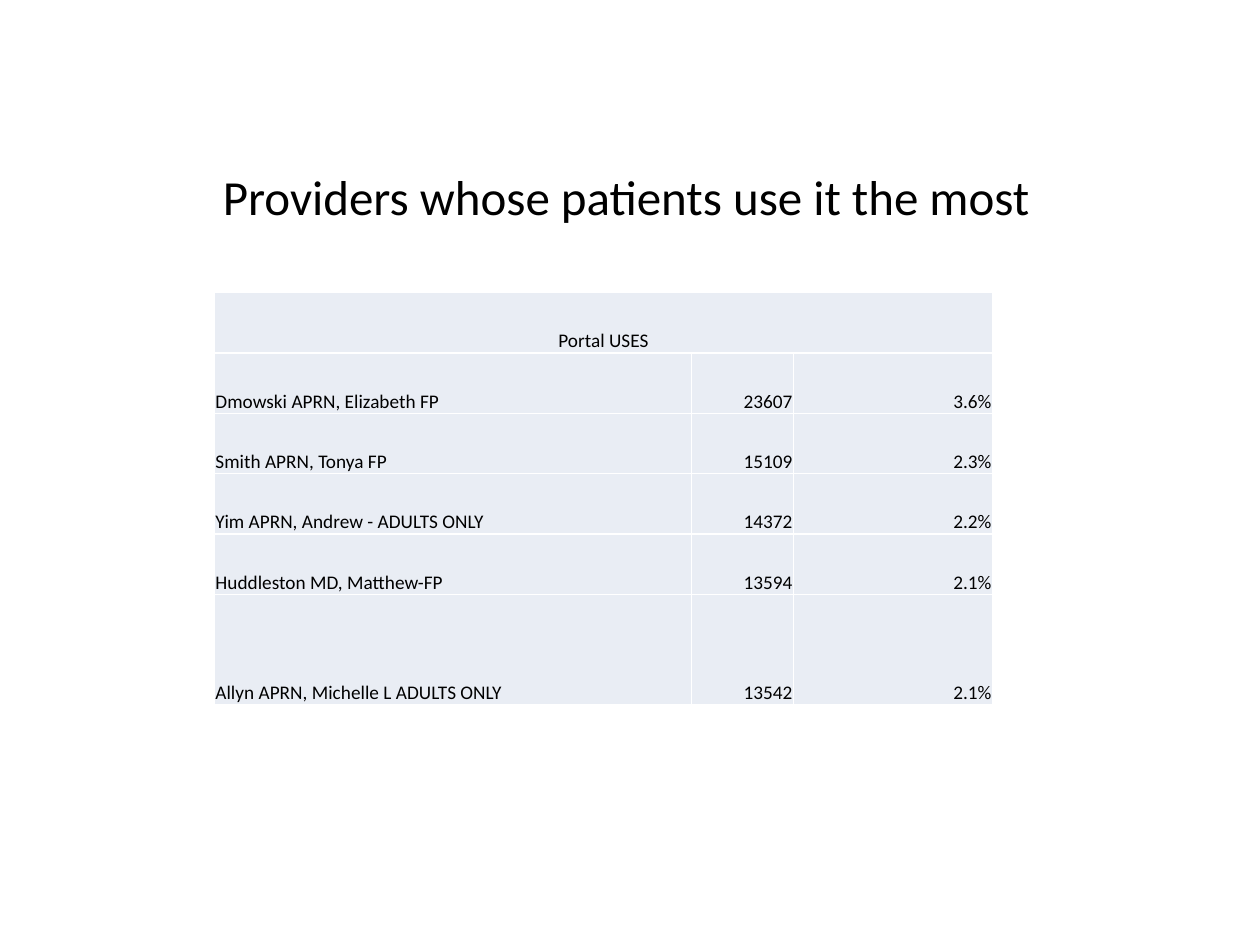
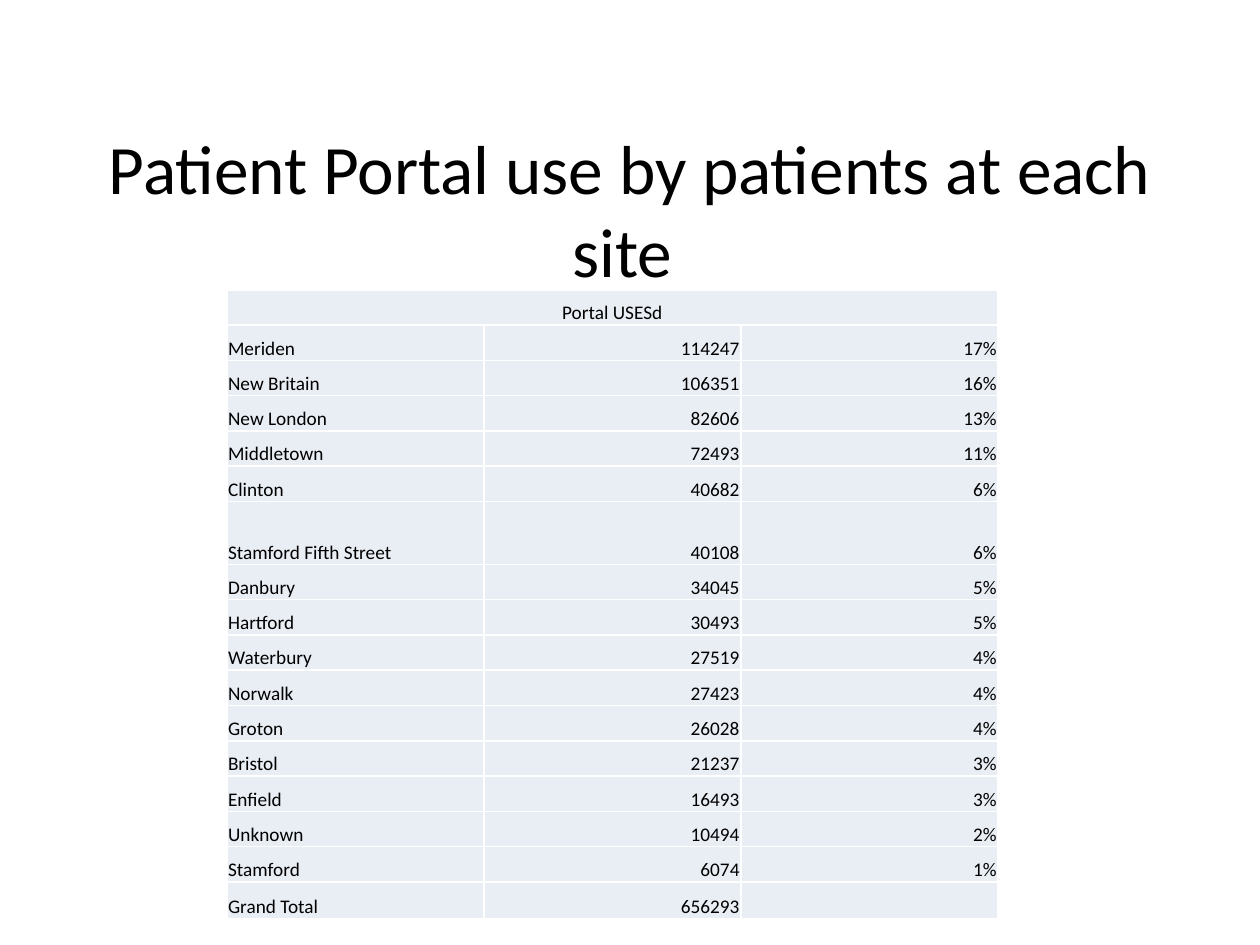
import pptx
import pptx.dml.color
import pptx.enum.text
import pptx.oxml.ns
import pptx.util
from lxml import etree

Inches = pptx.util.Inches
Pt = pptx.util.Pt
Align = pptx.enum.text.PP_ALIGN
Anchor = pptx.enum.text.MSO_ANCHOR

FONT = "Calibri"
TEXT_COLOR = pptx.dml.color.RGBColor(0x00, 0x00, 0x00)
CELL_COLOR = pptx.dml.color.RGBColor(0xE9, 0xED, 0xF4)
BORDER_COLOR = pptx.dml.color.RGBColor(0xFF, 0xFF, 0xFF)
CELL_SIZE = 11
BORDER_WIDTH = 1
COLUMN_ALIGNMENTS = (Align.LEFT, Align.RIGHT, Align.RIGHT)

PROVIDERS = [
    ("Dmowski APRN, Elizabeth FP", "23607", "3.6%"),
    ("Smith APRN, Tonya FP", "15109", "2.3%"),
    ("Yim APRN, Andrew - ADULTS ONLY", "14372", "2.2%"),
    ("Huddleston MD, Matthew-FP", "13594", "2.1%"),
    ("Allyn APRN, Michelle L ADULTS ONLY", "13542", "2.1%"),
]
SITES = [
    ("Meriden", "114247", "17%"),
    ("New Britain", "106351", "16%"),
    ("New London", "82606", "13%"),
    ("Middletown", "72493", "11%"),
    ("Clinton", "40682", "6%"),
    ("Stamford Fifth Street", "40108", "6%"),
    ("Danbury", "34045", "5%"),
    ("Hartford", "30493", "5%"),
    ("Waterbury", "27519", "4%"),
    ("Norwalk", "27423", "4%"),
    ("Groton", "26028", "4%"),
    ("Bristol", "21237", "3%"),
    ("Enfield", "16493", "3%"),
    ("Unknown", "10494", "2%"),
    ("Stamford", "6074", "1%"),
    ("Grand Total", "656293", ""),
]


def add_element(parent, tag, **attributes):
    return etree.SubElement(parent, pptx.oxml.ns.qn(tag), **attributes)


def format_paragraph(paragraph, size, alignment):
    paragraph.alignment = alignment
    for run in paragraph.runs:
        run.font.name = FONT
        run.font.size = Pt(size)
        run.font.color.rgb = TEXT_COLOR
    if not paragraph.runs:
        add_element(paragraph._p, "a:endParaRPr", sz=str(size * 100))


def add_title(slide, text, left, top, width, height, size):
    shape = slide.shapes.add_textbox(
        Inches(left), Inches(top), Inches(width), Inches(height))
    text_frame = shape.text_frame
    text_frame.word_wrap = True
    text_frame.vertical_anchor = Anchor.MIDDLE
    text_frame.text = text
    format_paragraph(text_frame.paragraphs[0], size, Align.CENTER)


def add_borders(cell):
    properties = cell._tc.get_or_add_tcPr()
    for side in ("L", "R", "T", "B"):
        line = add_element(properties, f"a:ln{side}", w=str(Pt(BORDER_WIDTH)))
        fill = add_element(line, "a:solidFill")
        add_element(fill, "a:srgbClr", val=str(BORDER_COLOR))


def format_cell(cell, text, alignment):
    cell.text = text
    cell.vertical_anchor = Anchor.BOTTOM
    cell.margin_left = cell.margin_right = cell.margin_top = Inches(0.01)
    cell.margin_bottom = 0
    format_paragraph(cell.text_frame.paragraphs[0], CELL_SIZE, alignment)
    add_borders(cell)
    cell.fill.solid()
    cell.fill.fore_color.rgb = CELL_COLOR


def add_usage_table(slide, heading, records, left, top, column_widths, row_heights):
    table = slide.shapes.add_table(
        len(row_heights), len(column_widths), Inches(left), Inches(top),
        Inches(sum(column_widths)), Inches(sum(row_heights))).table
    for column, width in zip(table.columns, column_widths):
        column.width = Inches(width)
    for row, height in zip(table.rows, row_heights):
        row.height = Inches(height)
    for row_index, record in enumerate([(heading, "", "")] + records):
        for column_index, text in enumerate(record):
            alignment = COLUMN_ALIGNMENTS[column_index] if row_index else Align.CENTER
            format_cell(table.cell(row_index, column_index), text, alignment)
    table.cell(0, 0).merge(table.cell(0, len(column_widths) - 1))


def add_providers_slide(presentation):
    slide = presentation.slides.add_slide(presentation.slide_layouts[6])
    add_title(slide, "Providers whose patients use it the most",
              0.47, 0.93, 9, 1.25, 28)
    add_usage_table(slide, "Portal USES", PROVIDERS, 1.7, 2.32,
                    [3.79, 0.81, 1.58], [0.48] * 5 + [0.87])


def add_sites_slide(presentation):
    slide = presentation.slides.add_slide(presentation.slide_layouts[6])
    add_title(slide, "Patient Portal use by patients at each site ",
              0.5, 0.98, 9, 1.34, 39.6)
    add_usage_table(slide, "Portal USESd", SITES, 1.8, 2.3,
                    [2.04] * 3, [0.28] * 6 + [0.5] + [0.28] * 9 + [0.29])


def main():
    presentation = pptx.Presentation()
    presentation.slide_width = Inches(10)
    presentation.slide_height = Inches(7.5)
    add_providers_slide(presentation)
    add_sites_slide(presentation)
    presentation.save("out.pptx")


if __name__ == "__main__":
    main()
